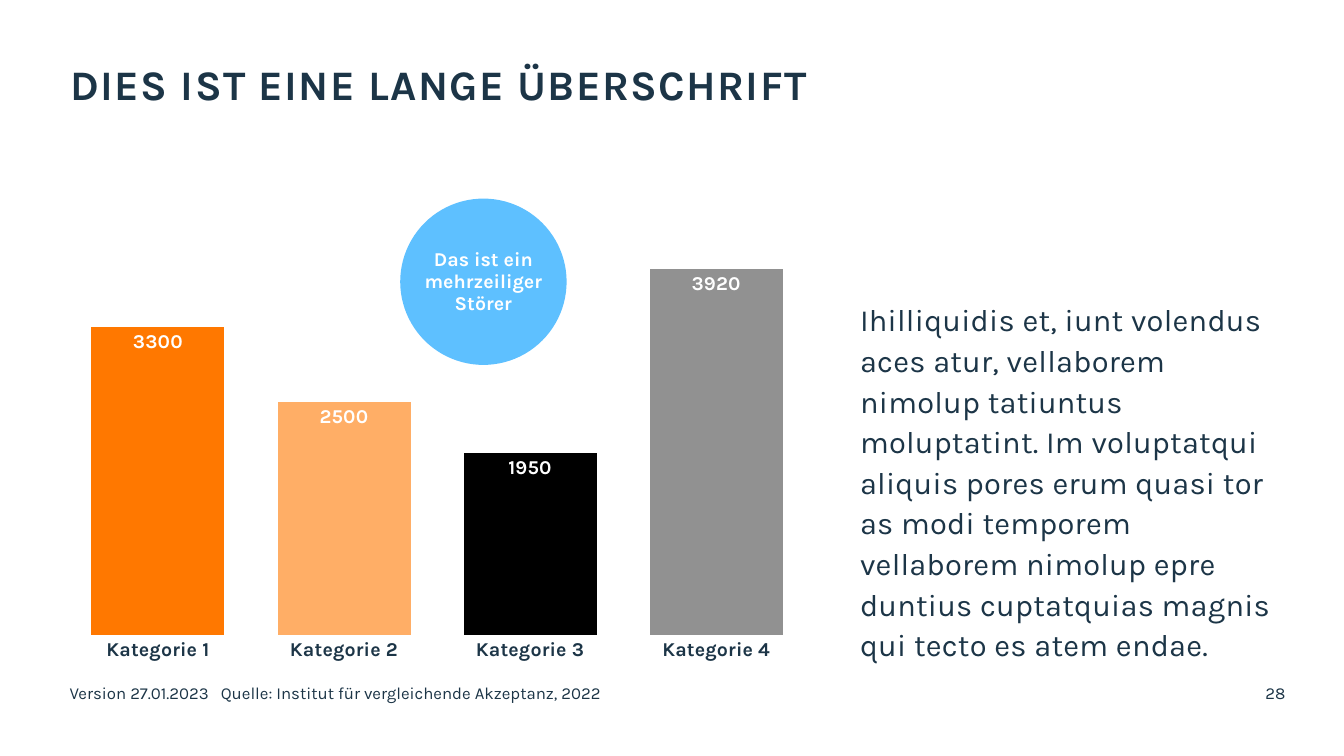
from dataclasses import dataclass, field

from lxml.etree import SubElement
from pptx import Presentation
from pptx.chart.data import CategoryChartData
from pptx.dml.color import RGBColor
from pptx.enum.chart import XL_CHART_TYPE as ChartType
from pptx.enum.chart import XL_LABEL_POSITION as LabelPos
from pptx.enum.chart import XL_TICK_MARK as TickMark
from pptx.enum.shapes import MSO_SHAPE as Shape
from pptx.enum.text import MSO_ANCHOR as Anchor
from pptx.enum.text import MSO_AUTO_SIZE as AutoSize
from pptx.enum.text import PP_ALIGN as Align
from pptx.oxml.ns import qn
from pptx.util import Inches, Pt

WIDTH, HEIGHT = Inches(13.33), Inches(7.5)
FONT = "Karla"
COLORS = {
    "ink": "1C3547",
    "white": "FFFFFF",
    "sky": "5EC0FF",
    "orange": "FF7800",
    "apricot": "FFAE66",
    "black": "000000",
    "grey": "919191",
}


@dataclass
class Box:
    """A frame in percent of the slide's width and height."""
    left: float
    top: float
    width: float
    height: float

    def emu(self) -> tuple:
        return (int(WIDTH * self.left / 100), int(HEIGHT * self.top / 100),
                int(WIDTH * self.width / 100), int(HEIGHT * self.height / 100))


@dataclass
class TextSpec:
    text: str
    box: Box
    size: float
    color: str = "ink"
    bold: bool = False
    spacing: int = 0  # hundredths of a point
    anchor: Anchor = Anchor.TOP
    tab: float = 0  # inches
    para: dict = field(default_factory=dict)


@dataclass
class Bar:
    category: str
    value: int
    color: str


CHART_BOX = Box(3.68, 27.2, 57.69, 61.6)
BARS = [
    Bar("Kategorie 1", 3300, "orange"),
    Bar("Kategorie 2", 2500, "apricot"),
    Bar("Kategorie 3", 1950, "black"),
    Bar("Kategorie 4", 3920, "grey"),
]
TITLE = TextSpec("DIES IST EINE LANGE ÜBERSCHRIFT", Box(5.25, 8.8, 61.52, 14.93), 30,
                 bold=True, spacing=100, para={"line_spacing": 0.85})
BODY = TextSpec(
    "Ihilliquidis et, iunt volendus aces atur, vellaborem nimolup tatiuntus "
    "moluptatint. Im voluptatqui aliquis pores erum quasi tor as modi temporem "
    "vellaborem nimolup epre duntius cuptatquias magnis\vqui tecto es atem endae.",
    Box(63.99, 39.33, 31.58, 46.53), 22, spacing=20, para={"line_spacing": 1.1})
BADGE = TextSpec("Das ist ein mehrzeiliger Störer", Box(29.78, 26.27, 12.38, 22), 14,
                 color="white", bold=True, anchor=Anchor.MIDDLE,
                 para={"alignment": Align.CENTER, "line_spacing": 0.95})
FOOTERS = [
    TextSpec("28", Box(79.52, 90.27, 16.13, 5.33), 12, para={"alignment": Align.RIGHT}),
    TextSpec("Version 27.01.2023\tQuelle: Institut für vergleichende Akzeptanz, 2022",
             Box(5.18, 90.27, 61.74, 5.33), 12, tab=1.49),
]


def rgb(name: str) -> RGBColor:
    return RGBColor.from_string(COLORS[name])


def style_font(font, size: float, color: str, bold: bool = False) -> None:
    for key, value in {"name": FONT, "size": Pt(size), "bold": bold}.items():
        setattr(font, key, value)
    font.color.rgb = rgb(color)


def write_text(sp, spec: TextSpec) -> None:
    """Place the shape and fill it with the text and its format."""
    sp.left, sp.top, sp.width, sp.height = spec.box.emu()
    tf = sp.text_frame
    frame = {"word_wrap": True, "auto_size": AutoSize.NONE, "vertical_anchor": spec.anchor,
             "margin_left": 0, "margin_top": 0, "margin_right": 0, "margin_bottom": 0}
    for key, value in frame.items():
        setattr(tf, key, value)
    p = tf.paragraphs[0]
    p.text = spec.text
    for key, value in ({"alignment": Align.LEFT, "space_before": Pt(0)} | spec.para).items():
        setattr(p, key, value)
    props = p._p.get_or_add_pPr()
    props.set("marL", "0")
    props.set("indent", "0")
    SubElement(props, qn("a:buNone"))
    if spec.tab:
        tabs = SubElement(props, qn("a:tabLst"))
        SubElement(tabs, qn("a:tab"), pos=str(Inches(spec.tab)), algn="l")
    for r in p.runs:
        style_font(r.font, spec.size, spec.color, spec.bold)
        if spec.spacing:
            r._r.get_or_add_rPr().set("spc", str(spec.spacing))


def add_bar_chart(slide) -> None:
    data = CategoryChartData()
    data.categories = [bar.category for bar in BARS]
    data.add_series("Series 1", [bar.value for bar in BARS])
    chart = slide.shapes.add_chart(ChartType.COLUMN_CLUSTERED, *CHART_BOX.emu(), data).chart
    chart.has_legend = chart.has_title = False
    style_font(chart.font, 10, "ink")

    axis = chart.category_axis
    axis.major_tick_mark = TickMark.NONE
    axis.format.line.fill.background()
    style_font(axis.tick_labels.font, 14, "ink", bold=True)
    scale = {"visible": False, "has_major_gridlines": False,
             "minimum_scale": 0, "maximum_scale": 4500}
    for key, value in scale.items():
        setattr(chart.value_axis, key, value)

    plot = chart.plots[0]
    plot.gap_width, plot.overlap, plot.vary_by_categories = 40, 100, False
    series = plot.series[0]
    series.format.fill.solid()
    series.format.fill.fore_color.rgb = rgb("ink")
    for i, bar in enumerate(BARS):
        fill = series.points[i].format.fill
        fill.solid()
        fill.fore_color.rgb = rgb(bar.color)
    labels = series.data_labels
    labels.show_value, labels.position = True, LabelPos.INSIDE_END
    style_font(labels.font, 14, "white", bold=True)


def add_badge(slide) -> None:
    sp = slide.shapes.add_shape(Shape.OVAL, *BADGE.box.emu())
    sp.shadow.inherit = False
    sp.fill.solid()
    sp.fill.fore_color.rgb = rgb("sky")
    sp.line.fill.background()
    write_text(sp, BADGE)


def main() -> None:
    prs = Presentation()
    prs.slide_width, prs.slide_height = WIDTH, HEIGHT
    slide = prs.slides.add_slide(prs.slide_layouts[1])
    write_text(slide.shapes.title, TITLE)
    write_text(slide.placeholders[1], BODY)
    add_bar_chart(slide)
    for spec in FOOTERS:
        write_text(slide.shapes.add_textbox(*spec.box.emu()), spec)
    add_badge(slide)
    prs.save("out.pptx")


if __name__ == "__main__":
    main()
